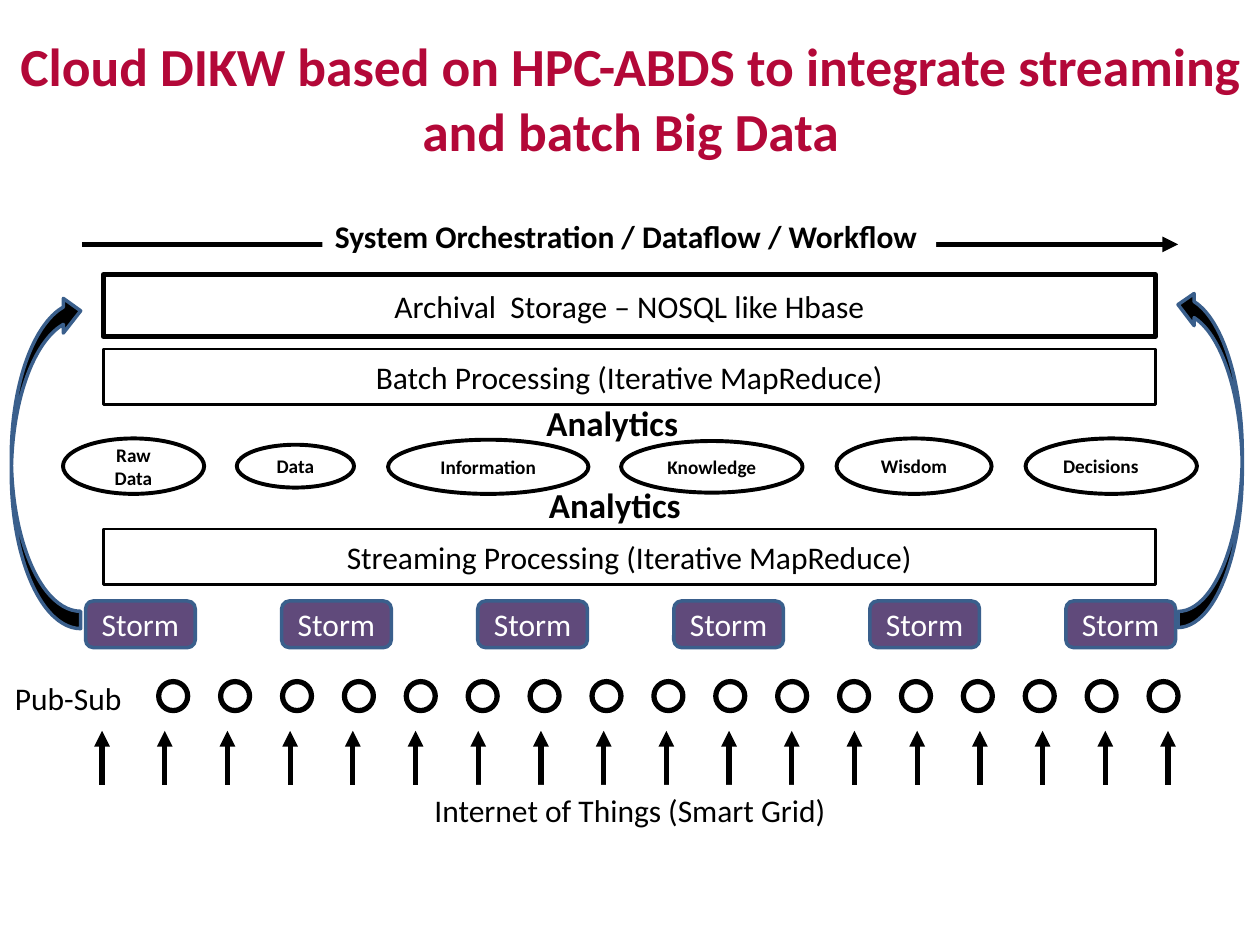
from dataclasses import dataclass

import lxml.etree
import pptx
import pptx.dml.color
import pptx.enum.shapes
import pptx.enum.text
import pptx.oxml
import pptx.oxml.ns
import pptx.util

Inches = pptx.util.Inches
Pt = pptx.util.Pt
RGBColor = pptx.dml.color.RGBColor
Shapes = pptx.enum.shapes.MSO_SHAPE
Align = pptx.enum.text.PP_ALIGN
Anchor = pptx.enum.text.MSO_ANCHOR
qn = pptx.oxml.ns.qn

FONT = "Calibri"
BLACK = RGBColor(0x00, 0x00, 0x00)
WHITE = RGBColor(0xFF, 0xFF, 0xFF)
CRIMSON = RGBColor(0xB3, 0x08, 0x38)
PURPLE = RGBColor(0x60, 0x4A, 0x7B)
STEEL = RGBColor(0x3A, 0x5F, 0x8C)


@dataclass(frozen=True)
class Box:
    left: float
    top: float
    width: float
    height: float


@dataclass(frozen=True)
class Style:
    preset: Shapes
    fill: RGBColor | None
    line: RGBColor
    weight: float
    size: float = 18
    bold: bool = False
    color: RGBColor = BLACK


@dataclass(frozen=True)
class Label:
    text: str
    box: Box
    size: float = 18
    bold: bool = False
    align: Align = Align.LEFT
    fill: RGBColor | None = WHITE
    outlined: bool = False


LAYER = Style(Shapes.RECTANGLE, None, BLACK, 1.5)
STORAGE = Style(Shapes.RECTANGLE, None, BLACK, 3)
STORM = Style(Shapes.ROUNDED_RECTANGLE, PURPLE, STEEL, 2, color=WHITE)
STAGE = Style(Shapes.OVAL, WHITE, BLACK, 2.25, size=11, bold=True)
BROKER = Style(Shapes.OVAL, WHITE, BLACK, 3)
FEEDBACK = Style(Shapes.CURVED_RIGHT_ARROW, BLACK, STEEL, 2)

LAYERS = [
    ("Archival  Storage – NOSQL like Hbase", Box(0.82, 2.18, 8.35, 0.49), STORAGE),
    ("Streaming Processing (Iterative MapReduce)", Box(0.82, 4.2, 8.35, 0.44), LAYER),
    ("Batch Processing (Iterative MapReduce)", Box(0.82, 2.77, 8.35, 0.44), LAYER),
]
STAGES = [
    ("Raw Data", Box(0.5, 3.48, 1.12, 0.44), Align.CENTER),
    ("Data", Box(1.88, 3.53, 0.93, 0.34), Align.CENTER),
    ("Information", Box(3.08, 3.49, 1.59, 0.43), Align.CENTER),
    ("Knowledge", Box(4.93, 3.5, 1.44, 0.41), Align.CENTER),
    ("Wisdom", Box(6.64, 3.48, 1.23, 0.44), Align.CENTER),
    ("Decisions", Box(8.14, 3.48, 1.36, 0.44), Align.LEFT),
]
ANALYTICS = [
    Label("Analytics", Box(left, top, 1.26, 0.44), 20, True, Align.CENTER, None, True)
    for left, top in ((4.23, 3.14), (4.25, 3.79))
]
CAPTIONS = [
    Label("Internet of Things (Smart Grid)", Box(3.35, 6.23, 3.34, 0.4)),
    Label("Pub-Sub", Box(0.02, 5.34, 1.06, 0.4)),
    Label("System Orchestration / Dataflow / Workflow", Box(2.56, 1.67, 4.87, 0.4), bold=True),
]


def spread(first: float, last: float, count: int) -> list[float]:
    """Return evenly spaced positions from first to last."""
    step = (last - first) / (count - 1)
    return [first + step * index for index in range(count)]


def lengths(box: Box) -> tuple:
    return Inches(box.left), Inches(box.top), Inches(box.width), Inches(box.height)


def write(text_frame, text: str, size: float, bold: bool, color: RGBColor, align: Align) -> None:
    text_frame.text = text
    paragraph = text_frame.paragraphs[0]
    paragraph.alignment = align
    font = paragraph.runs[0].font
    font.name = FONT
    font.size = Pt(size)
    font.bold = bold
    font.color.rgb = color


def add_shape(slide, box: Box, style: Style, text: str = "", align: Align = Align.CENTER):
    shape = slide.shapes.add_shape(style.preset, *lengths(box))
    shape.shadow.inherit = False
    if style.fill is None:
        shape.fill.background()
    else:
        shape.fill.solid()
        shape.fill.fore_color.rgb = style.fill
    shape.line.color.rgb = style.line
    shape.line.width = Pt(style.weight)
    if text:
        shape.text_frame.vertical_anchor = Anchor.MIDDLE
        write(shape.text_frame, text, style.size, style.bold, style.color, align)
    return shape


def add_feedback(slide, box: Box, *flips: str) -> None:
    shape = add_shape(slide, box, FEEDBACK)
    for flip in flips:
        shape.element.spPr.find(qn("a:xfrm")).set(flip, "1")


def add_label(slide, label: Label) -> None:
    shape = slide.shapes.add_textbox(*lengths(label.box))
    if label.fill is not None:
        shape.fill.solid()
        shape.fill.fore_color.rgb = label.fill
    text_frame = shape.text_frame
    text_frame.word_wrap = False
    text_frame.auto_size = pptx.enum.text.MSO_AUTO_SIZE.SHAPE_TO_FIT_TEXT
    write(text_frame, label.text, label.size, label.bold, BLACK, label.align)
    if label.outlined:
        properties = text_frame.paragraphs[0].runs[0].font._element
        outline = pptx.oxml.parse_xml(
            f'<a:ln {pptx.oxml.ns.nsdecls("a")} w="{Pt(0.75)}">'
            f'<a:solidFill><a:srgbClr val="{WHITE}"/></a:solidFill></a:ln>'
        )
        properties.insert(0, outline)


def add_arrow(slide, start: tuple[float, float], end: tuple[float, float]) -> None:
    arrow = slide.shapes.add_connector(
        pptx.enum.shapes.MSO_CONNECTOR.STRAIGHT, *map(Inches, start + end)
    )
    arrow.line.color.rgb = BLACK
    arrow.line.width = Pt(3)
    lxml.etree.SubElement(arrow.line._get_or_add_ln(), qn("a:tailEnd"), type="triangle")
    lxml.etree.SubElement(arrow.element.spPr, qn("a:effectLst"))


def add_title(slide, text: str) -> None:
    title = slide.shapes.title
    title.left, title.top, title.width, title.height = lengths(Box(0.01, 0.32, 9.99, 0.91))
    title.text_frame.vertical_anchor = Anchor.MIDDLE
    title.text_frame.auto_size = pptx.enum.text.MSO_AUTO_SIZE.NONE
    write(title.text_frame, text, 30.6, True, CRIMSON, Align.CENTER)


def main() -> None:
    presentation = pptx.Presentation()
    presentation.slide_width = Inches(10)
    presentation.slide_height = Inches(7.5)
    slide = presentation.slides.add_slide(presentation.slide_layouts.get_by_name("Title Only"))

    add_title(slide, "Cloud DIKW based on HPC-ABDS to integrate streaming and batch Big Data")
    add_arrow(slide, (0.65, 1.94), (9.35, 1.94))
    for x in spread(0.81, 9.27, 18):
        add_arrow(slide, (x, 6.23), (x, 5.8))
    for left in spread(0.68, 8.46, 6):
        add_shape(slide, Box(left, 4.77, 0.87, 0.37), STORM, "Storm")
    for text, box, style in LAYERS:
        add_shape(slide, box, style, text)
    add_feedback(slide, Box(0.09, 2.33, 0.55, 2.66), "flipV")
    add_feedback(slide, Box(9.35, 2.29, 0.51, 2.69), "flipH", "flipV")
    for text, box, align in STAGES:
        add_shape(slide, box, STAGE, text, align)
    for left in spread(1.26, 9.12, 17):
        add_shape(slide, Box(left, 5.41, 0.23, 0.23), BROKER)
    for label in ANALYTICS + CAPTIONS:
        add_label(slide, label)

    presentation.save("out.pptx")


if __name__ == "__main__":
    main()
